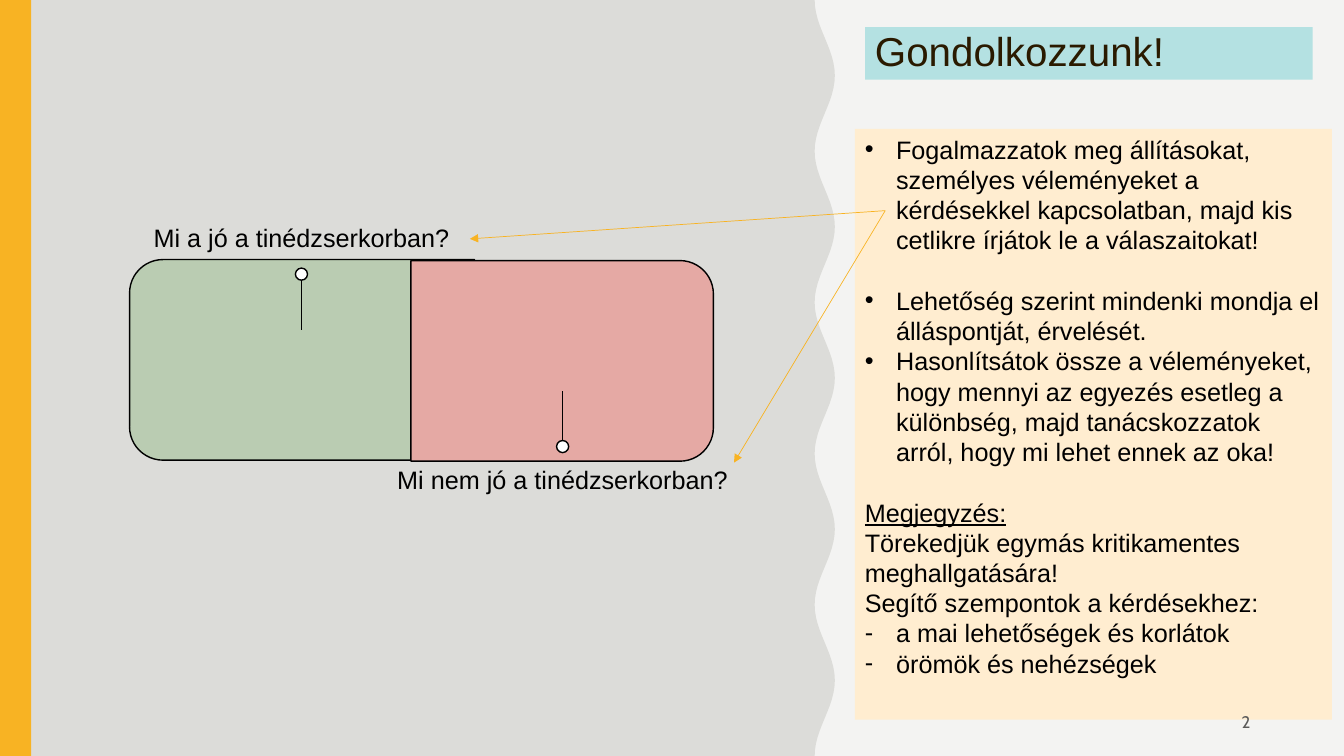
from math import cos, pi

from lxml import etree
from pptx import Presentation
from pptx.dml.color import RGBColor
from pptx.enum.shapes import MSO_CONNECTOR, MSO_SHAPE
from pptx.enum.text import MSO_ANCHOR, PP_ALIGN
from pptx.oxml.ns import qn
from pptx.util import Inches, Pt

RECT, OVAL = MSO_SHAPE.RECTANGLE, MSO_SHAPE.OVAL
ROUNDED_TOP = MSO_SHAPE.ROUND_2_SAME_RECTANGLE
STRAIGHT = MSO_CONNECTOR.STRAIGHT
TOP, MIDDLE, BOTTOM = MSO_ANCHOR.TOP, MSO_ANCHOR.MIDDLE, MSO_ANCHOR.BOTTOM
LEFT, CENTER, RIGHT = PP_ALIGN.LEFT, PP_ALIGN.CENTER, PP_ALIGN.RIGHT

COLORS = {
    "paper": "F3F3F2", "wave": "DCDCD9", "amber": "F8B323", "green": "BACCB2",
    "red": "E5A9A4", "black": "000000", "white": "FFFFFF", "title_fill": "B4E1E2",
    "title": "2A1A00", "cream": "FFEDD0", "number": "595959",
}

# Content
TITLE = "Gondolkozzunk!"
PAGE_NUMBER = "2"
# text, bullet, underlined, blank space above in points
TASKS = [
    ("Fogalmazzatok meg állításokat, személyes véleményeket a kérdésekkel "
     "kapcsolatban, majd kis cetlikre írjátok le a válaszaitokat!", "•", False, 0),
    ("Lehetőség szerint mindenki mondja el álláspontját, érvelését.", "•", False, 21.6),
    ("Hasonlítsátok össze a véleményeket, hogy mennyi az egyezés esetleg a különbség, "
     "majd tanácskozzatok arról, hogy mi lehet ennek az oka!", "•", False, 0),
    ("Megjegyzés:", None, True, 21.6),
    ("Törekedjük egymás kritikamentes meghallgatására!", None, False, 0),
    ("Segítő szempontok a kérdésekhez:", None, False, 0),
    ("a mai lehetőségek és korlátok", "-", False, 0),
    ("örömök és nehézségek", "-", False, 0),
]
# fill, unrotated box, rotation, label, label box, anchor, label margins,
# stem (x, top, bottom), top of pin head
QUESTIONS = [
    ("green", (2, 1.86, 1.99, 3.42), 270, "Mi a jó a tinédzserkorban?",
     (1.35, 0.53, 3.28, 2.13), BOTTOM, (0, 0, 0, 0.15), (2.99, 2.78, 3.27), 2.66),
    ("red", (4.58, 2.08, 1.99, 3), 90, "Mi nem jó a tinédzserkorban?",
     (3.7, 4.49, 3.76, 2.13), TOP, (0, 0.15, 0, 0), (5.58, 3.88, 4.37), 4.37),
]
ARROW_START = (8.78, 2.09)
ARROW_ENDS = [(4.66, 2.37), (7.28, 4.59)]
PIN = 0.12
WAVE_MIDDLE, WAVE_SWING, WAVE_PERIOD, WAVE_STEPS = 8.18, 0.1, 1.5, 120
PAGE_WIDTH, PAGE_HEIGHT = 13.33, 7.5
HANG = Inches(0.31)


def rgb(name):
    return RGBColor.from_string(COLORS[name])


def paint(shape, fill, line=None):
    shape.shadow.inherit = False
    shape.fill.solid()
    shape.fill.fore_color.rgb = rgb(fill)
    if line:
        shape.line.color.rgb = rgb(line)
        shape.line.width = Pt(1)
    else:
        shape.line.fill.background()


def add_block(kind, box, fill, line=None):
    shape = page.shapes.add_shape(kind, *map(Inches, box))
    paint(shape, fill, line)
    return shape


def set_frame(shape, anchor, margins=(0.1, 0.05, 0.1, 0.05)):
    frame = shape.text_frame
    frame.word_wrap = True
    frame.vertical_anchor = anchor
    (frame.margin_left, frame.margin_top,
     frame.margin_right, frame.margin_bottom) = map(Inches, margins)
    return frame


def style(para, text, size, color, align=LEFT, font="Arial", spacing=None):
    para.text = text
    para.alignment = align
    para.line_spacing = spacing
    para.font.size = Pt(size)
    para.font.name = font
    para.font.color.rgb = rgb(color)


def add_label(text, box, anchor, *look, margins=(0.1, 0.05, 0.1, 0.05), **more):
    label = page.shapes.add_textbox(*map(Inches, box))
    style(set_frame(label, anchor, margins).paragraphs[0], text, *look, **more)


def add_line(start, end, color, arrow=False):
    line = page.shapes.add_connector(STRAIGHT, *map(Inches, start + end))
    line.line.color.rgb = rgb(color)
    line.line.width = Pt(0.5)
    if arrow:
        etree.SubElement(line.line._get_or_add_ln(), qn("a:tailEnd"), type="triangle")
    etree.SubElement(line._element.spPr, qn("a:effectLst"))


def add_bullet(para, mark):
    props = para._p.get_or_add_pPr()
    props.set("marL", str(HANG))
    props.set("indent", str(-HANG))
    etree.SubElement(props, qn("a:buFont"), typeface="Arial")
    etree.SubElement(props, qn("a:buChar"), char=mark)


deck = Presentation()
deck.slide_width, deck.slide_height = Inches(PAGE_WIDTH), Inches(PAGE_HEIGHT)
page = deck.slides.add_slide(deck.slide_layouts[6])
page.background.fill.solid()
page.background.fill.fore_color.rgb = rgb("paper")

# Grey panel with a wavy right edge, and the amber strip
edge = []
for step in range(WAVE_STEPS + 1):
    y = PAGE_HEIGHT * step / WAVE_STEPS
    x = WAVE_MIDDLE - WAVE_SWING * cos(2 * pi * y / WAVE_PERIOD)
    edge.append((Inches(x), Inches(y)))
outline = page.shapes.build_freeform(0, 0)
outline.add_line_segments(edge + [(0, Inches(PAGE_HEIGHT))], close=True)
paint(outline.convert_to_shape(), "wave")
add_block(RECT, (0, 0, 0.31, PAGE_HEIGHT), "amber")

# Two question halves with labels and pins
for fill, box, turn, text, label_box, anchor, margins, stem, pin_top in QUESTIONS:
    add_block(ROUNDED_TOP, box, fill, "black").rotation = turn
    add_label(text, label_box, anchor, 18, "black", CENTER, margins=margins, spacing=0.9)
    x, stem_top, stem_bottom = stem
    add_line((x, stem_top), (x, stem_bottom), "black")
    add_block(OVAL, (x - PIN / 2, pin_top, PIN, PIN), "white", "black")

# Title
title = add_block(RECT, (8.58, 0.27, 4.44, 0.52), "title_fill")
style(set_frame(title, MIDDLE).paragraphs[0], TITLE, 28.8, "title", spacing=0.9)

# Task panel
panel = add_block(RECT, (8.48, 1.28, 4.73, 5.86), "cream")
frame = set_frame(panel, TOP)
for index, (text, mark, underlined, gap) in enumerate(TASKS):
    para = frame.paragraphs[0] if index == 0 else frame.add_paragraph()
    style(para, text, 18, "black")
    para.space_before = Pt(gap)
    para.font.underline = underlined
    if mark:
        add_bullet(para, mark)

# Page number and arrows
add_label(PAGE_NUMBER, (9.42, 6.97, 3.08, 0.38), MIDDLE, 12, "number", RIGHT, "Cabin")
for end in ARROW_ENDS:
    add_line(ARROW_START, end, "amber", arrow=True)

deck.save("out.pptx")
